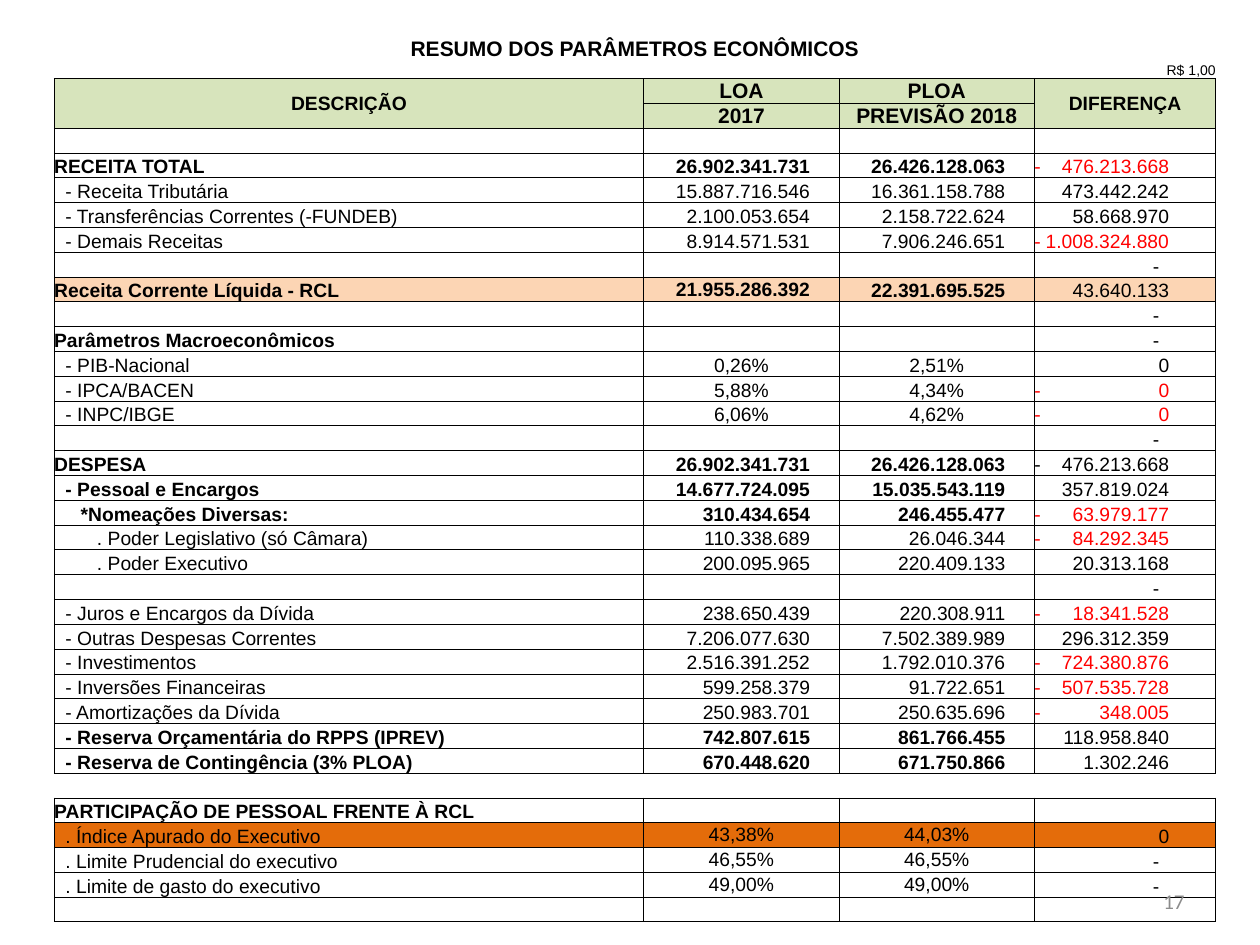
from dataclasses import dataclass
from typing import Optional

import lxml.etree
import pptx
import pptx.dml.color
import pptx.enum.text
import pptx.oxml.ns
import pptx.table
import pptx.util

Inches = pptx.util.Inches
Pt = pptx.util.Pt
RGBColor = pptx.dml.color.RGBColor
Align = pptx.enum.text.PP_ALIGN
Anchor = pptx.enum.text.MSO_ANCHOR
qn = pptx.oxml.ns.qn

BLACK = RGBColor(0x00, 0x00, 0x00)
RED = RGBColor(0xFF, 0x00, 0x00)
GRAY = RGBColor(0x8C, 0x8C, 0x8C)
HEADER_GREEN = RGBColor(0xD7, 0xE4, 0xBC)
PEACH = RGBColor(0xFC, 0xD5, 0xB4)
ORANGE = RGBColor(0xE4, 0x6C, 0x0A)

PLAIN_TABLE_STYLE = "{2D5ABB26-0587-4C30-8999-92F81FD0307C}"
COLUMN_WIDTHS = (4.68, 1.55, 1.55, 1.44)
INDENTS = (0, 0.09, 0.21, 0.34)
AMOUNT_MARGIN = 0.23
DIFFERENCE_MARGIN = 0.37
DASH_MARGIN = 0.45


@dataclass(frozen=True)
class BudgetRow:
    description: str = ""
    loa: str = ""
    ploa: str = ""
    difference: str = ""
    level: int = 0
    bold: bool = False
    fill: Optional[RGBColor] = None
    negative_color: RGBColor = RED
    middle_columns: tuple[int, ...] = ()
    bordered: bool = True


@dataclass(frozen=True)
class CellStyle:
    size: float = 11
    bold: bool = False
    color: RGBColor = BLACK
    align: Align = Align.LEFT
    anchor: Anchor = Anchor.BOTTOM
    left: float = 0
    right: float = 0
    tab: Optional[float] = None


BUDGET_ROWS = (
    BudgetRow(),
    BudgetRow("RECEITA TOTAL", "26.902.341.731", "26.426.128.063", "-476.213.668", bold=True),
    BudgetRow("- Receita Tributária", "15.887.716.546", "16.361.158.788", "473.442.242", 1),
    BudgetRow("- Transferências Correntes (-FUNDEB)", "2.100.053.654", "2.158.722.624", "58.668.970", 1),
    BudgetRow("- Demais Receitas", "8.914.571.531", "7.906.246.651", "-1.008.324.880", 1),
    BudgetRow(difference="-"),
    BudgetRow("Receita Corrente Líquida - RCL", "21.955.286.392", "22.391.695.525", "43.640.133",
              bold=True, fill=PEACH, middle_columns=(1,)),
    BudgetRow(difference="-"),
    BudgetRow("Parâmetros Macroeconômicos", difference="-", bold=True),
    BudgetRow("- PIB-Nacional", "0,26%", "2,51%", "0", 1),
    BudgetRow("- IPCA/BACEN", "5,88%", "4,34%", "-0", 1),
    BudgetRow("- INPC/IBGE", "6,06%", "4,62%", "-0", 1),
    BudgetRow(difference="-"),
    BudgetRow("DESPESA", "26.902.341.731", "26.426.128.063", "-476.213.668",
              bold=True, negative_color=BLACK),
    BudgetRow("- Pessoal e Encargos", "14.677.724.095", "15.035.543.119", "357.819.024", 1, True),
    BudgetRow("*Nomeações Diversas:", "310.434.654", "246.455.477", "-63.979.177", 2, True),
    BudgetRow(". Poder Legislativo (só Câmara)", "110.338.689", "26.046.344", "-84.292.345", 3),
    BudgetRow(". Poder Executivo", "200.095.965", "220.409.133", "20.313.168", 3),
    BudgetRow(difference="-"),
    BudgetRow("- Juros e Encargos da Dívida", "238.650.439", "220.308.911", "-18.341.528", 1),
    BudgetRow("- Outras Despesas Correntes", "7.206.077.630", "7.502.389.989", "296.312.359", 1),
    BudgetRow("- Investimentos", "2.516.391.252", "1.792.010.376", "-724.380.876", 1),
    BudgetRow("- Inversões Financeiras", "599.258.379", "91.722.651", "-507.535.728", 1),
    BudgetRow("- Amortizações da Dívida", "250.983.701", "250.635.696", "-348.005", 1),
    BudgetRow("- Reserva Orçamentária do RPPS (IPREV)", "742.807.615", "861.766.455", "118.958.840", 1, True),
    BudgetRow("- Reserva de Contingência (3% PLOA)", "670.448.620", "671.750.866", "1.302.246", 1, True),
    BudgetRow(bordered=False),
    BudgetRow("PARTICIPAÇÃO DE PESSOAL FRENTE À RCL", bold=True),
    BudgetRow(". Índice Apurado do Executivo", "43,38%", "44,03%", "0", 1,
              fill=ORANGE, middle_columns=(1, 2)),
    BudgetRow(". Limite Prudencial do executivo", "46,55%", "46,55%", "-", 1, middle_columns=(1, 2)),
    BudgetRow(". Limite de gasto do executivo", "49,00%", "49,00%", "-", 1, middle_columns=(1, 2)),
    BudgetRow(),
)
HEADER_ROWS = (
    ("DESCRIÇÃO", "LOA", "PLOA", "DIFERENÇA"),
    ("", "2017", "PREVISÃO 2018", ""),
)
FIRST_HEADER = 2
FIRST_BUDGET = FIRST_HEADER + len(HEADER_ROWS)


def write_cell(cell: pptx.table._Cell, text: str, style: CellStyle) -> None:
    cell.margin_left, cell.margin_right = Inches(style.left), Inches(style.right)
    cell.margin_top = cell.margin_bottom = 0
    cell.vertical_anchor = style.anchor
    paragraph = cell.text_frame.paragraphs[0]
    paragraph.alignment = style.align
    if not text:
        lxml.etree.SubElement(paragraph._p, qn("a:endParaRPr"), sz=str(int(style.size * 100)))
        return
    if style.tab is not None:
        stops = lxml.etree.SubElement(paragraph._p.get_or_add_pPr(), qn("a:tabLst"))
        lxml.etree.SubElement(stops, qn("a:tab"), pos=str(Inches(style.tab)), algn="r")
    run = paragraph.add_run()
    run.text = text
    run.font.name = "Arial"
    run.font.size = Pt(style.size)
    run.font.bold = style.bold
    run.font.color.rgb = style.color


def paint_cell(cell: pptx.table._Cell, fill: Optional[RGBColor], bordered: bool) -> None:
    if fill is None:
        cell.fill.background()
    else:
        cell.fill.solid()
        cell.fill.fore_color.rgb = fill
    if not bordered:
        return
    properties = cell._tc.get_or_add_tcPr()
    for position, side in enumerate(("lnL", "lnR", "lnT", "lnB")):
        border = lxml.etree.Element(qn(f"a:{side}"), w=str(Pt(0.5)))
        solid = lxml.etree.SubElement(border, qn("a:solidFill"))
        lxml.etree.SubElement(solid, qn("a:srgbClr"), val=str(BLACK))
        properties.insert(position, border)


def amount_style(row: BudgetRow, column: int, amount: str) -> CellStyle:
    anchor = Anchor.MIDDLE if column in row.middle_columns else Anchor.BOTTOM
    if amount.endswith("%"):
        return CellStyle(align=Align.CENTER, anchor=anchor)
    return CellStyle(bold=row.bold, align=Align.RIGHT, anchor=anchor, right=AMOUNT_MARGIN)


def write_difference(cell: pptx.table._Cell, row: BudgetRow) -> None:
    difference = row.difference
    if difference == "-":
        write_cell(cell, difference, CellStyle(align=Align.RIGHT, right=DASH_MARGIN))
    elif difference.startswith("-"):
        tab = COLUMN_WIDTHS[3] - DIFFERENCE_MARGIN
        write_cell(cell, "-\t" + difference[1:], CellStyle(color=row.negative_color, tab=tab))
    else:
        write_cell(cell, difference, CellStyle(align=Align.RIGHT, right=DIFFERENCE_MARGIN))


def write_budget_row(table: pptx.table.Table, index: int, row: BudgetRow) -> None:
    cells = [table.cell(index, column) for column in range(len(COLUMN_WIDTHS))]
    write_cell(cells[0], row.description, CellStyle(bold=row.bold, left=INDENTS[row.level]))
    for column, amount in ((1, row.loa), (2, row.ploa)):
        write_cell(cells[column], amount, amount_style(row, column, amount))
    write_difference(cells[3], row)
    for cell in cells:
        paint_cell(cell, row.fill, row.bordered)


def write_heading(table: pptx.table.Table) -> None:
    for index in range(FIRST_HEADER):
        for column in range(len(COLUMN_WIDTHS)):
            cell = table.cell(index, column)
            paint_cell(cell, None, False)
            if (index, column) not in ((0, 0), (1, 3)):
                write_cell(cell, "", CellStyle(size=8))
    write_cell(table.cell(0, 0), "RESUMO DOS PARÂMETROS ECONÔMICOS",
               CellStyle(size=12, bold=True, align=Align.CENTER))
    write_cell(table.cell(1, 3), "R$ 1,00", CellStyle(size=8, align=Align.RIGHT))
    table.cell(0, 0).merge(table.cell(0, 3))
    for index, labels in enumerate(HEADER_ROWS, FIRST_HEADER):
        for column, label in enumerate(labels):
            size = 12 if column in (1, 2) else 11
            anchor = Anchor.MIDDLE if index == FIRST_HEADER else Anchor.BOTTOM
            write_cell(table.cell(index, column), label,
                       CellStyle(size=size, bold=True, align=Align.CENTER, anchor=anchor))
            paint_cell(table.cell(index, column), HEADER_GREEN, True)
    for column in (0, 3):
        table.cell(FIRST_HEADER, column).merge(table.cell(FIRST_HEADER + 1, column))


def main() -> None:
    presentation = pptx.Presentation()
    presentation.slide_width, presentation.slide_height = Inches(10), Inches(7.5)
    slide = presentation.slides.add_slide(presentation.slide_layouts[6])
    row_count = FIRST_BUDGET + len(BUDGET_ROWS)
    frame = slide.shapes.add_table(row_count, len(COLUMN_WIDTHS), Inches(0.43), Inches(0.29),
                                   Inches(sum(COLUMN_WIDTHS)), Inches(7.01))
    table = frame.table
    table.first_row = table.horz_banding = False
    table._tbl.tblPr.find(qn("a:tableStyleId")).text = PLAIN_TABLE_STYLE
    for column, width in zip(table.columns, COLUMN_WIDTHS):
        column.width = Inches(width)
    for row in table.rows:
        row.height = Inches(6.5 / 33)
    table.rows[1].height = Inches(0.13)
    table.rows[row_count - 1].height = Inches(0.18)
    write_heading(table)
    for index, budget_row in enumerate(BUDGET_ROWS, FIRST_BUDGET):
        write_budget_row(table, index, budget_row)

    page_number = slide.shapes.add_textbox(Inches(7.17), Inches(6.95), Inches(2.33), Inches(0.4))
    page_number.text_frame.word_wrap = True
    page_number.text_frame.vertical_anchor = Anchor.MIDDLE
    paragraph = page_number.text_frame.paragraphs[0]
    paragraph.alignment = Align.RIGHT
    run = paragraph.add_run()
    run.text = "17"
    run.font.name = "Calibri"
    run.font.size = Pt(12)
    run.font.color.rgb = GRAY
    presentation.save("out.pptx")


if __name__ == "__main__":
    main()
